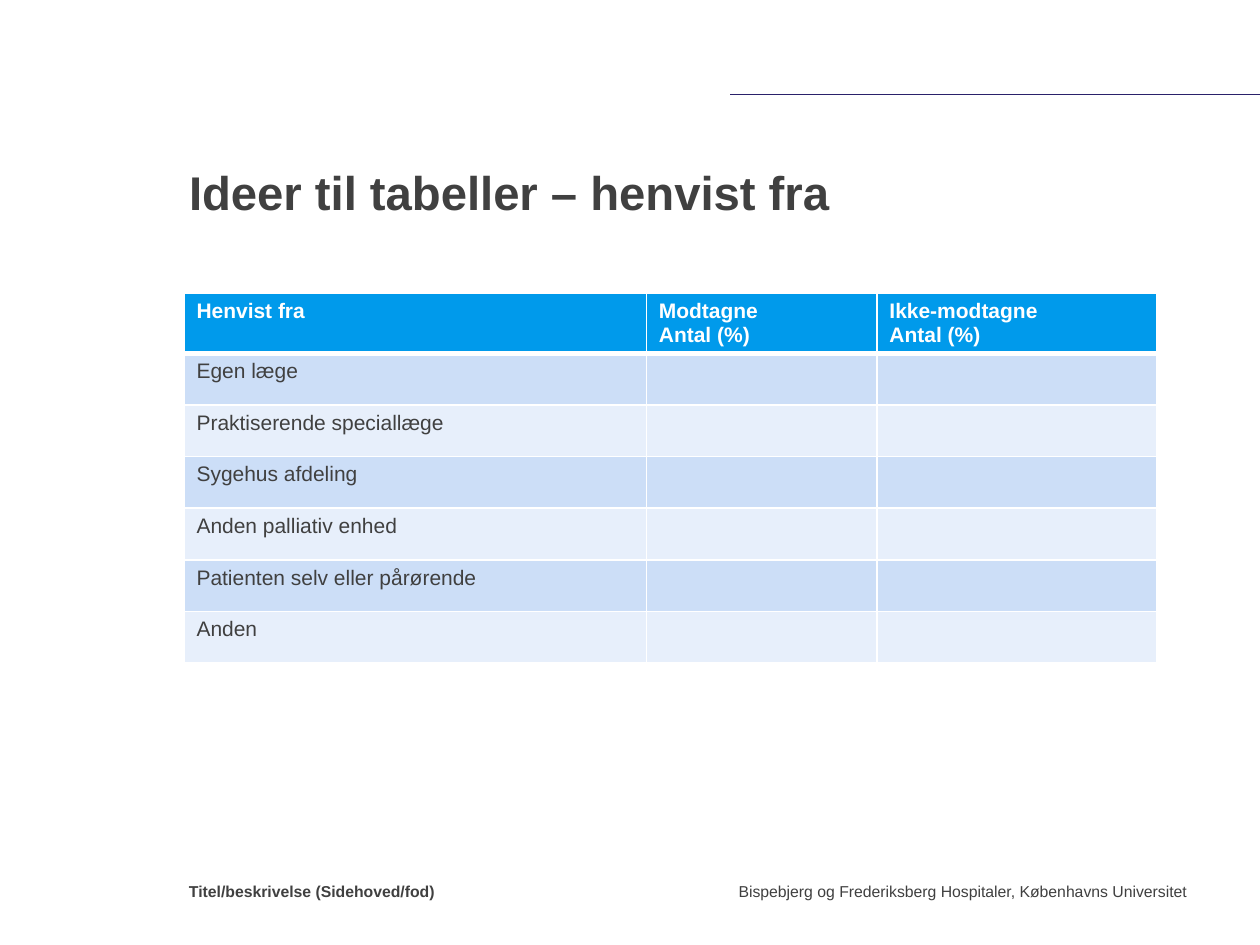
from lxml import etree
from pptx import Presentation
from pptx.dml.color import RGBColor
from pptx.enum.shapes import MSO_CONNECTOR
from pptx.enum.text import MSO_ANCHOR, MSO_AUTO_SIZE, PP_ALIGN
from pptx.oxml.ns import qn
from pptx.util import Inches, Pt

LEFT, RIGHT = PP_ALIGN.LEFT, PP_ALIGN.RIGHT
TOP, BOTTOM = MSO_ANCHOR.TOP, MSO_ANCHOR.BOTTOM
NO_AUTOFIT = MSO_AUTO_SIZE.NONE
STRAIGHT = MSO_CONNECTOR.STRAIGHT

FONT = "Arial"
COLORS = {
    "text": "404040",
    "white": "FFFFFF",
    "rule": "2A216A",
    "header": "009AEB",
    "band_dark": "CCDEF7",
    "band_light": "E7EFFB",
}
HEADERS = ["Henvist fra", "Modtagne\nAntal (%)", "Ikke-modtagne\nAntal (%)"]
REFERRERS = [
    "Egen læge",
    "Praktiserende speciallæge",
    "Sygehus afdeling",
    "Anden palliativ enhed",
    "Patienten selv eller pårørende",
    "Anden",
]
COL_WIDTHS = [3.67, 1.83, 2.22]
HEADER_HEIGHT, ROW_HEIGHT = 0.47, 0.41


def rgb(name):
    return RGBColor.from_string(COLORS[name])


def add_run(p, text, size, color="text", bold=False):
    r = p.add_run()
    r.text = text
    r.font.name = FONT
    r.font.size = Pt(size)
    r.font.bold = bold
    r.font.color.rgb = rgb(color)


def format_frame(tf, anchor):
    tf.word_wrap = True
    tf.auto_size = NO_AUTOFIT
    tf.vertical_anchor = anchor
    tf.margin_left = tf.margin_top = tf.margin_right = tf.margin_bottom = 0


def add_title(s, text):
    sp = s.shapes.title
    sp.left, sp.top = Inches(1.5), Inches(0.92)
    sp.width, sp.height = Inches(7.92), Inches(0.83)
    format_frame(sp.text_frame, BOTTOM)
    p = sp.text_frame.paragraphs[0]
    p.alignment = LEFT
    p.line_spacing = 0.9
    add_run(p, text, 27, bold=True)


def add_rule(s):
    line = s.shapes.add_connector(
        STRAIGHT, Inches(10), Inches(0.75), Inches(5.79), Inches(0.75))
    line.line.color.rgb = rgb("rule")
    line.line.width = Pt(0.5)
    etree.SubElement(line._element.spPr, qn("a:effectLst"))


def add_footer(s, left, width, text, align, bold=False):
    sp = s.shapes.add_textbox(
        Inches(left), Inches(7), Inches(width), Inches(0.5))
    format_frame(sp.text_frame, TOP)
    p = sp.text_frame.paragraphs[0]
    p.alignment = align
    add_run(p, text, 9, bold=bold)


def set_borders(cell, bottom, top):
    tcPr = cell._tc.get_or_add_tcPr()
    for side, width in (("L", 1), ("R", 1), ("T", top), ("B", bottom)):
        ln = etree.SubElement(tcPr, qn(f"a:ln{side}"), w=str(Pt(width)))
        fill = etree.SubElement(ln, qn("a:solidFill"))
        etree.SubElement(fill, qn("a:srgbClr"), val=COLORS["white"])


def fill_cell(cell, text, fill, color, bold, top=1, bottom=1):
    set_borders(cell, bottom, top)
    cell.fill.solid()
    cell.fill.fore_color.rgb = rgb(fill)
    tf = cell.text_frame
    for i, line in enumerate(text.splitlines()):
        p = tf.add_paragraph() if i else tf.paragraphs[0]
        add_run(p, line, 12, color, bold)


def add_referral_table(s):
    heights = [HEADER_HEIGHT] + [ROW_HEIGHT] * len(REFERRERS)
    table = s.shapes.add_table(
        len(heights), len(COL_WIDTHS), Inches(1.46), Inches(2.33),
        Inches(sum(COL_WIDTHS)), Inches(sum(heights))).table
    for col, width in zip(table.columns, COL_WIDTHS):
        col.width = Inches(width)
    for row, height in zip(table.rows, heights):
        row.height = Inches(height)
    for c, text in enumerate(HEADERS):
        fill_cell(table.cell(0, c), text, "header", "white", True, bottom=3)
    for i, name in enumerate(REFERRERS, 1):
        band = "band_dark" if i % 2 else "band_light"
        for c, text in enumerate([name, "", ""]):
            fill_cell(table.cell(i, c), text, band, "text", False,
                      top=3 if i == 1 else 1)


def main():
    prs = Presentation()
    prs.slide_width, prs.slide_height = Inches(10), Inches(7.5)
    s = prs.slides.add_slide(prs.slide_layouts[5])
    add_rule(s)
    add_title(s, "Ideer til tabeller – henvist fra")
    add_referral_table(s)
    add_footer(s, 5.16, 4.26,
               "Bispebjerg og Frederiksberg Hospitaler, Københavns Universitet",
               RIGHT)
    add_footer(s, 1.5, 3.5, "Titel/beskrivelse (Sidehoved/fod)", LEFT, True)
    prs.save("out.pptx")


if __name__ == "__main__":
    main()
